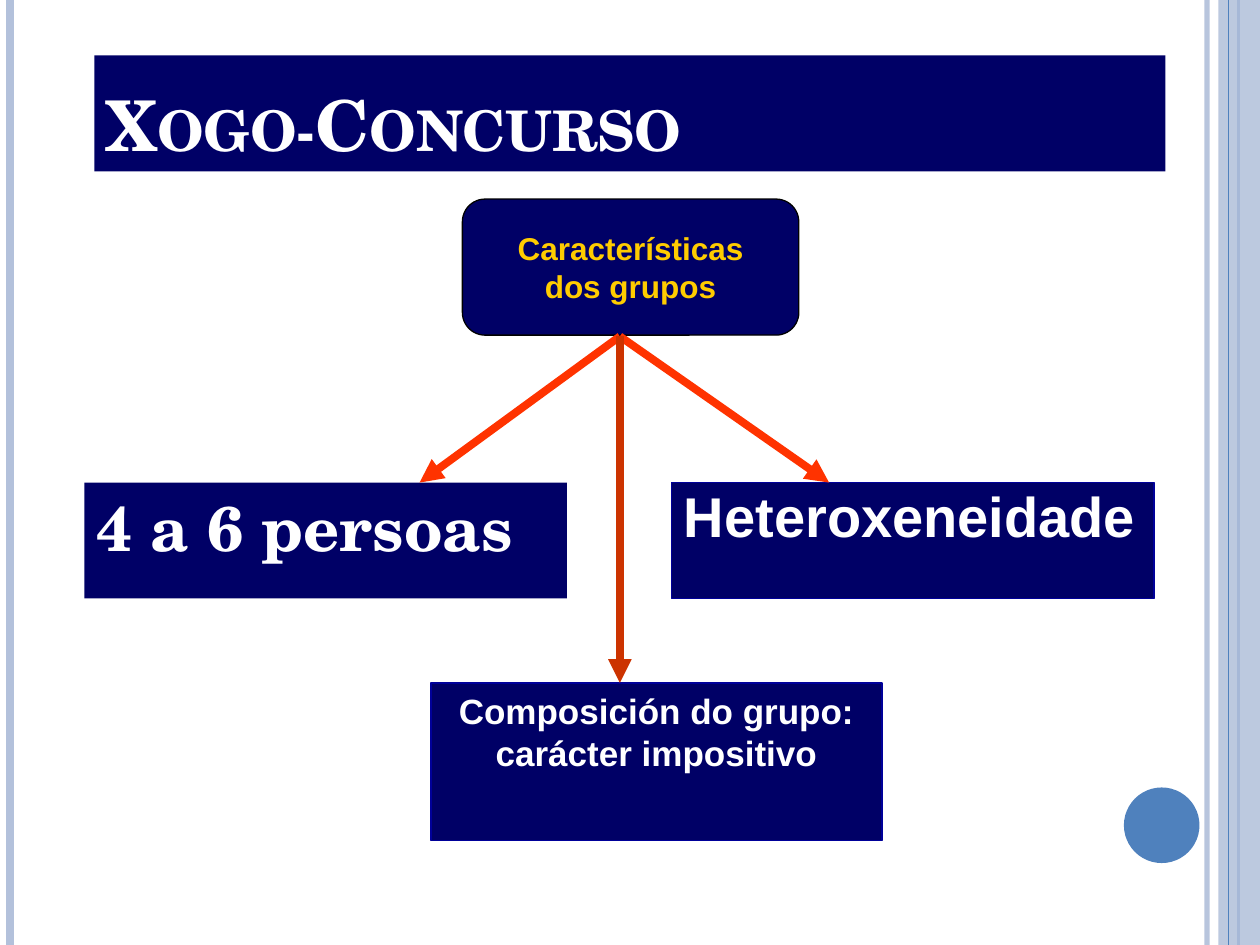
from lxml import etree
from pptx import Presentation
from pptx.dml.color import RGBColor
from pptx.enum import shapes, text
from pptx.oxml.ns import qn
from pptx.util import Inches, Pt

NAVY = RGBColor(0x00, 0x00, 0x66)
EDGE_BLUE = RGBColor(0x00, 0x00, 0x99)
BLACK = RGBColor(0x00, 0x00, 0x00)
WHITE = RGBColor(0xFF, 0xFF, 0xFF)
GOLD = RGBColor(0xFF, 0xCC, 0x00)
RED = RGBColor(0xFF, 0x33, 0x00)
DARK_RED = RGBColor(0xCC, 0x33, 0x00)
PALE_BLUE = RGBColor(0xB3, 0xC1, 0xDB)
BLUE = RGBColor(0x4F, 0x81, 0xBD)

SERIF = "TeX Gyre Schola"
SANS = "Arial"
KIND = shapes.MSO_SHAPE
ALIGN = text.PP_ALIGN
ANCHOR = text.MSO_ANCHOR


def set_opacity(properties, percent):
    """Make the colour of a solid fill or line partly transparent."""
    color = properties.find(".//" + qn("a:srgbClr"))
    etree.SubElement(color, qn("a:alpha")).set("val", str(percent * 1000))


def add_shape(page, box, fill, kind=KIND.RECTANGLE, edge=None):
    shape = page.shapes.add_shape(kind, *map(Inches, box))
    shape.shadow.inherit = False
    shape.fill.solid()
    shape.fill.fore_color.rgb = fill
    if edge is None:
        shape.line.fill.background()
    else:
        shape.line.color.rgb = edge
        shape.line.width = Pt(0.75)
    return shape


def add_line(page, start, end, color, width):
    line = page.shapes.add_connector(
        shapes.MSO_CONNECTOR.STRAIGHT, *map(Inches, start + end))
    line.line.color.rgb = color
    line.line.width = Pt(width)
    etree.SubElement(line._element.spPr, qn("a:effectLst"))
    return line


def add_arrow(page, start, end, color):
    arrow = add_line(page, start, end, color, 4.5)
    tail = etree.SubElement(arrow.line._get_or_add_ln(), qn("a:tailEnd"))
    tail.set("type", "triangle")


def write(shape, wording, size, font, color=WHITE, align=ALIGN.LEFT,
          anchor=ANCHOR.TOP, wrap=True, spacing=None, before=0):
    """Fill a shape with bold text, one paragraph for each line of wording."""
    frame = shape.text_frame
    frame.text = wording
    frame.word_wrap = wrap
    frame.vertical_anchor = anchor
    for para in frame.paragraphs:
        para.alignment = align
        para.line_spacing = spacing
        para.space_before = Pt(before)
        for span in para.runs:
            span.font.name = font
            span.font.size = Pt(size)
            span.font.bold = True
            span.font.color.rgb = color


def add_side_bands(page, width, height):
    def rule(x, color, weight):
        return add_line(page, (x, 0), (x, height), color, weight)

    pale_rule = rule(width - 0.42, PALE_BLUE, 3)
    set_opacity(pale_rule._element.spPr, 93)
    rule(0.08, PALE_BLUE, 4.5)
    rule(width - 0.17, BLUE, 1.5)
    band = add_shape(page, (width - 0.33, 0, 0.33, height), PALE_BLUE)
    set_opacity(band._element.spPr, 87)
    rule(width - 0.25, BLUE, 0.75)
    add_shape(page, (width - 1.08, height - 1.25, 0.6, 0.6), BLUE, KIND.OVAL)


def add_title(page, box):
    title = add_shape(page, box, NAVY)
    write(title, "Xogo-Concurso", 40, SERIF, anchor=ANCHOR.BOTTOM, spacing=0.8)
    span = title.text_frame.paragraphs[0].runs[0]
    span.font._element.set("cap", "small")


def add_group_diagram(page, left, top):
    """Place the root box, its three traits and the arrows between them."""
    row = top + 2.25
    bottom = top + 3.84

    size_box = add_shape(page, (left, row, 3.83, 0.92), NAVY)
    write(size_box, "4 a 6 persoas", 36, SERIF, before=6)

    root = add_shape(page, (left + 3, top, 2.67, 1.08), NAVY,
                     KIND.ROUNDED_RECTANGLE, BLACK)
    write(root, "Características\ndos grupos", 18, SANS, GOLD, ALIGN.CENTER,
          ANCHOR.MIDDLE, wrap=False)

    variety = add_shape(page, (left + 4.66, row, 3.83, 0.92), NAVY,
                        edge=EDGE_BLUE)
    write(variety, "Heteroxeneidade", 32, SANS, spacing=0.9, before=6.4)

    makeup = add_shape(page, (left + 2.75, bottom, 3.58, 1.25), NAVY,
                       edge=EDGE_BLUE)
    write(makeup, "Composición do grupo: carácter impositivo", 20, SANS,
          align=ALIGN.CENTER, before=4)

    start = (left + 4.25, top + 1.09)
    for x, y, color in ((2.66, row, RED), (5.91, row, RED),
                        (4.25, bottom, DARK_RED)):
        add_arrow(page, start, (left + x, y), color)


def main():
    width, height = 10, 7.5
    deck = Presentation()
    deck.slide_width = Inches(width)
    deck.slide_height = Inches(height)
    page = deck.slides.add_slide(deck.slide_layouts[6])
    page.background.fill.solid()
    page.background.fill.fore_color.rgb = WHITE
    add_side_bands(page, width, height)
    add_group_diagram(page, 0.67, 1.58)
    add_title(page, (0.75, 0.44, 8.5, 0.92))
    deck.save("out.pptx")


if __name__ == "__main__":
    main()
